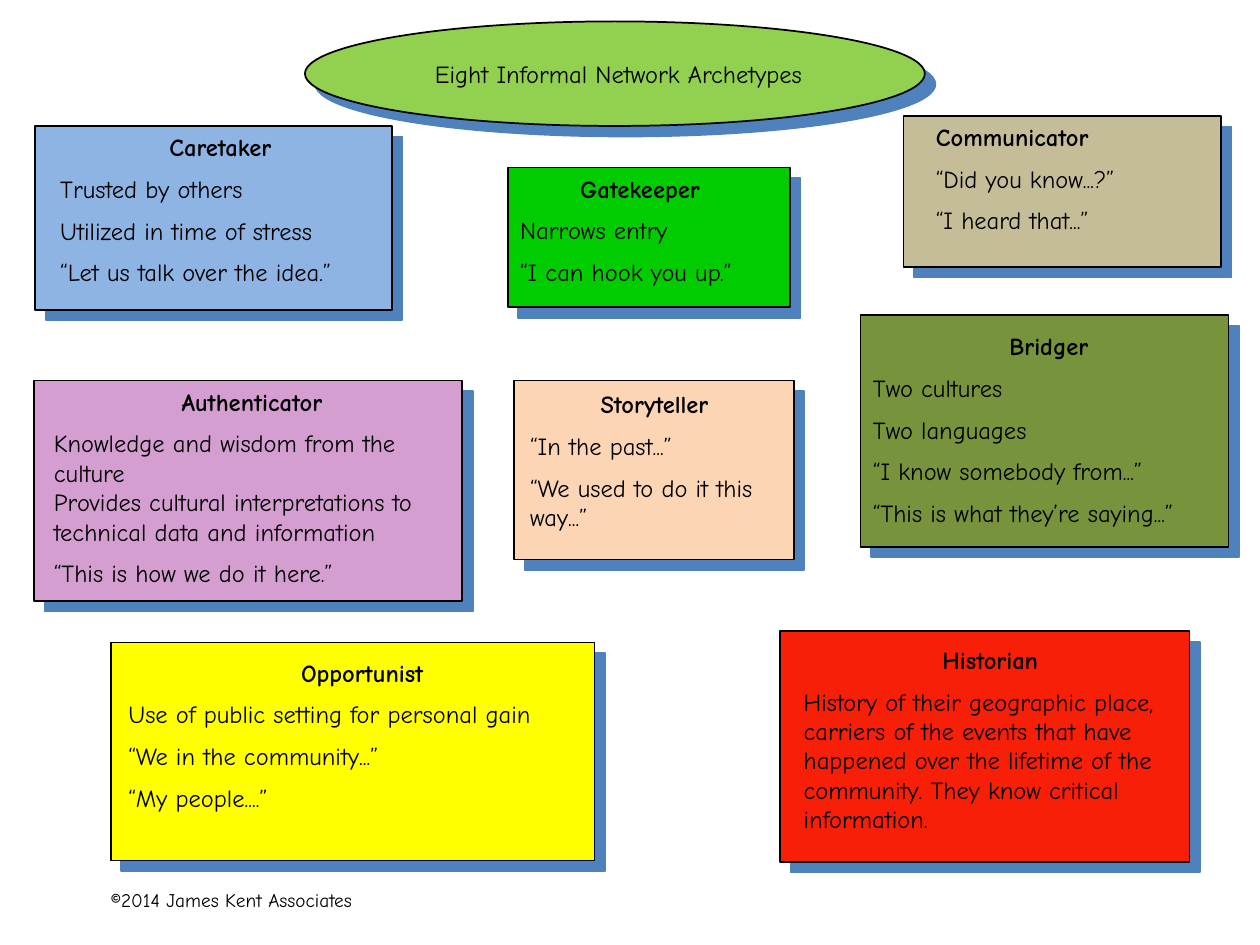
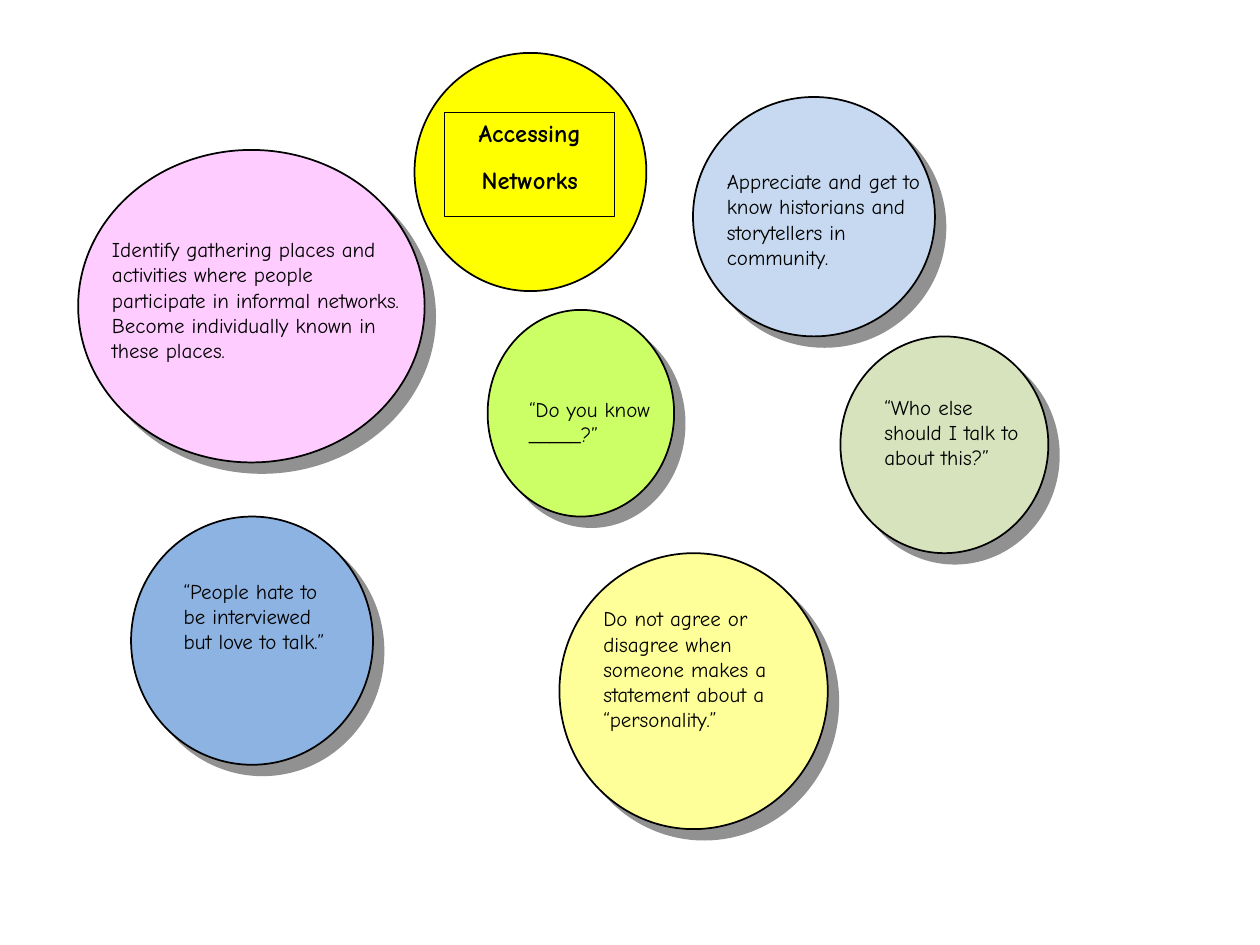
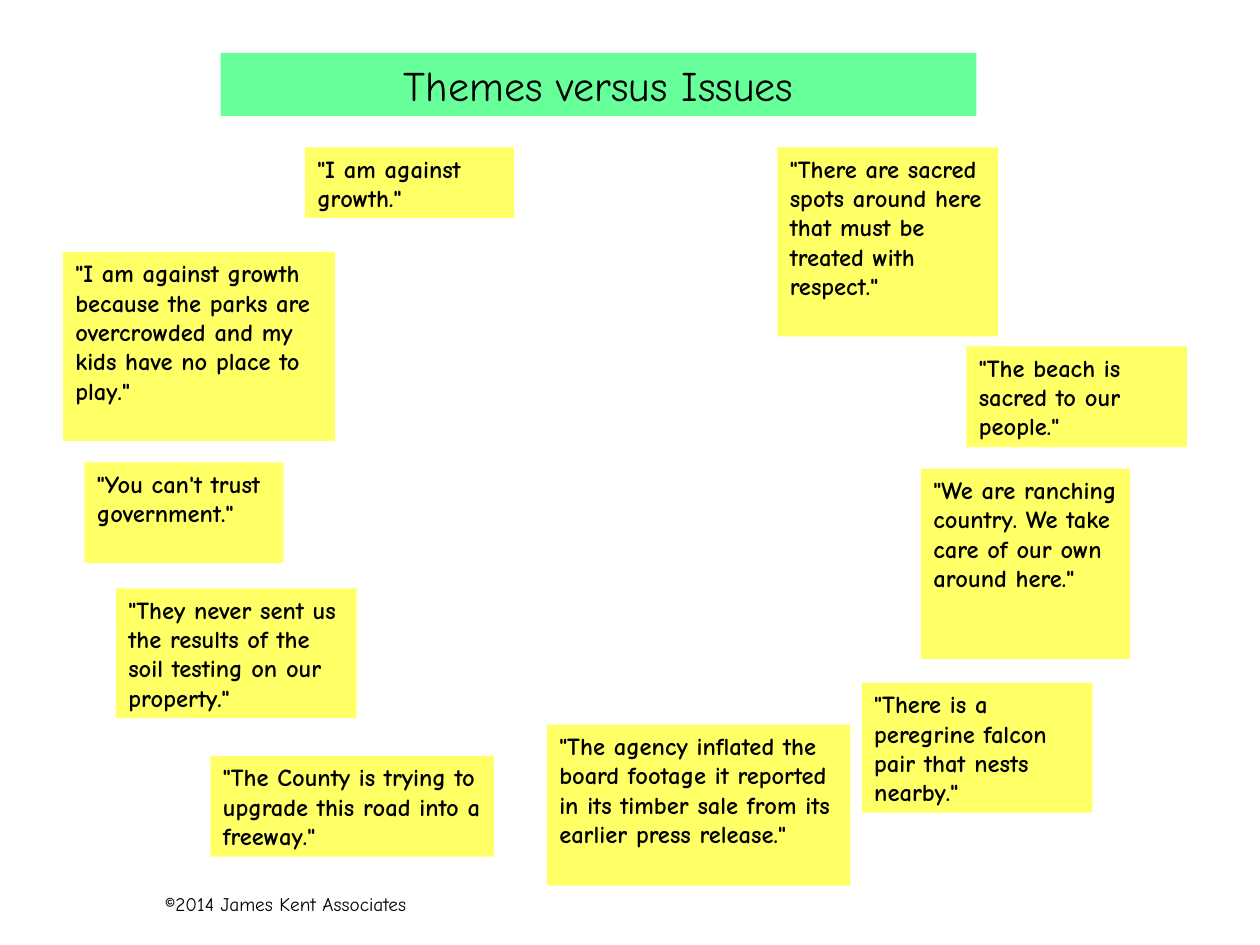
from lxml import etree
from pptx import Presentation
from pptx.dml.color import RGBColor
from pptx.enum.shapes import MSO_SHAPE
from pptx.enum.text import MSO_ANCHOR, MSO_AUTO_SIZE, PP_ALIGN
from pptx.oxml.ns import qn
from pptx.util import Inches, Pt

RECTANGLE, ELLIPSE = MSO_SHAPE.RECTANGLE, MSO_SHAPE.OVAL
LEFT, CENTER = PP_ALIGN.LEFT, PP_ALIGN.CENTER
TOP = MSO_ANCHOR.TOP
FIXED_SIZE = MSO_AUTO_SIZE.NONE

SLIDE_WIDTH, SLIDE_HEIGHT = Inches(10), Inches(7.5)
COLUMNS, ROWS = 100, 75
TITLE_ONLY, BLANK_TEXT = 5, ""
FONT = "Comic Neue"
SHADOW_DISTANCE = Pt(8.5)
SHADOW_ANGLE = 45 * 60000

BLACK = RGBColor(0x00, 0x00, 0x00)
BLUE_SHADOW = RGBColor(0x4F, 0x81, 0xBD)
GRAY_SHADOW = RGBColor(0x91, 0x91, 0x91)
LIME = RGBColor(0x92, 0xD0, 0x50)
SKY = RGBColor(0x8E, 0xB4, 0xE3)
TAN = RGBColor(0xC4, 0xBD, 0x97)
PEACH = RGBColor(0xFC, 0xD5, 0xB5)
OLIVE = RGBColor(0x77, 0x93, 0x3C)
GREEN = RGBColor(0x00, 0xCC, 0x00)
YELLOW = RGBColor(0xFF, 0xFF, 0x00)
RED = RGBColor(0xF8, 0x1F, 0x08)
ORCHID = RGBColor(0xD4, 0x9E, 0xD1)
PINK = RGBColor(0xFF, 0xCC, 0xFF)
PALE_BLUE = RGBColor(0xC6, 0xD9, 0xF1)
BRIGHT_LIME = RGBColor(0xCC, 0xFF, 0x66)
SAGE = RGBColor(0xD6, 0xE3, 0xBC)
CREAM = RGBColor(0xFF, 0xFF, 0x99)
BLUE = RGBColor(0x8D, 0xB3, 0xE2)
MINT = RGBColor(0x66, 0xFF, 0x99)
NOTE_YELLOW = RGBColor(0xFF, 0xFF, 0x66)

COPYRIGHT = "©2014 James Kent Associates"

ARCHETYPES = [
    (SKY, (2.8, 10, 28.3, 14.6), (3.8, 10, 27.4, 14.1), CENTER, "Caretaker",
     ["Trusted by others", "Utilized in time of stress", "“Let us talk over the idea.”"]),
    (TAN, (71.7, 9.2, 25.2, 12), (73.3, 9.2, 25, 10.5), LEFT, "Communicator",
     ["“Did you know...?”", "“I heard that...”"]),
    (PEACH, (40.8, 30.2, 22.2, 14.2), (41.1, 30.4, 21.7, 12.9), CENTER, "Storyteller",
     ["“In the past...”", "“We used to do it this way...”"]),
    (OLIVE, (68.3, 25, 29.2, 18.4), (68.3, 25.8, 29.9, 17.6), CENTER, "Bridger",
     ["Two cultures", "Two languages", "“I know somebody from...”",
      "“This is what they’re saying...”"]),
    (GREEN, (40.3, 13.3, 22.4, 11.1), (40.3, 13.3, 21, 10.5), CENTER, "Gatekeeper",
     ["Narrows entry", "“I can hook you up.”"]),
    (YELLOW, (8.8, 51, 38.4, 17.3), (9.2, 51.7, 39.1, 14.1), CENTER, "Opportunist",
     ["Use of public setting for personal gain", "“We in the community...”",
      "“My people....”"]),
    (RED, (61.9, 50.1, 32.5, 18.3), (62.8, 50.7, 31.6, 16.7), CENTER, "Historian",
     ["History of their geographic place, carriers of the events that have happened "
      "over the lifetime of the community. They know critical information."]),
    (ORCHID, (2.7, 30.2, 34, 17.5), (3.3, 30.2, 33.4, 18), CENTER, "Authenticator",
     ["Knowledge and wisdom from the culture\v"
      "Provides cultural interpretations to technical data and information",
      "“This is how we do it here.”"]),
]

ACCESS_TIPS = [
    (PINK, (6.2, 11.9, 27.5, 24.8), (7.9, 18.3, 25.8, 14.1),
     "Identify gathering places and activities where people participate in "
     "informal networks. Become individually known in these places."),
    (PALE_BLUE, (55, 7.7, 19.2, 19), (56.7, 12.9, 17.5, 10.2),
     "Appreciate and get to know historians and storytellers in community."),
    (BRIGHT_LIME, (38.7, 24.6, 14.8, 16.4), (41, 31, 13.8, 5.4), "“Do you know _____?”"),
    (SAGE, (66.7, 26.7, 16.5, 17.2), (69.2, 30.8, 13.2, 9.6),
     "“Who else should I talk to about this?”"),
    (CREAM, (44.4, 43.9, 21.3, 21.9), (46.9, 47.6, 16.4, 15.6),
     "Do not agree or disagree when someone makes a statement about a “personality.”"),
    (BLUE, (10.4, 41, 19.2, 19.7), (13.6, 45.4, 14.5, 11.7),
     "“People hate to be interviewed but love to talk.”"),
]

QUOTES = [
    ((24.2, 11.7, 16.6, 5.6), '"I am against growth."'),
    ((5, 20, 21.6, 15),
     '"I am against growth because the parks are overcrowded and my kids have no '
     'place to play."'),
    ((6.7, 36.7, 15.8, 8), '"You can\'t trust government."'),
    ((9.2, 46.7, 19.1, 10.3),
     '"They never sent us the results of the soil testing on our property."'),
    ((16.7, 60, 22.5, 8), '"The County is trying to upgrade this road into a freeway."'),
    ((43.4, 57.5, 24.1, 12.8),
     '"The agency inflated the board footage it reported in its timber sale from its '
     'earlier press release."'),
    ((68.4, 54.2, 18.3, 10.3), '"There is a peregrine falcon pair that nests nearby."'),
    ((73.1, 37.2, 16.6, 15.1),
     '"We are ranching country. We take care of our own around here."'),
    ((76.7, 27.5, 17.5, 8), '"The beach is sacred to our people."'),
    ((61.7, 11.7, 17.5, 15),
     '"There are sacred spots around here that must be treated with respect."'),
]


def grid_box(area):
    """Turn columns and rows into left, top, width and height on the slide."""
    left, top, width, height = area
    column, row = SLIDE_WIDTH / COLUMNS, SLIDE_HEIGHT / ROWS
    return [round(length) for length in (left * column, top * row, width * column, height * row)]


def write_text(shape, *texts, size=14, bold=False, heading=False, align=LEFT,
               heading_align=CENTER, before=7, after=0):
    """Write one paragraph per text line; a line after a \\v follows without a gap."""
    frame = shape.text_frame
    frame.word_wrap = True
    frame.auto_size = FIXED_SIZE
    frame.vertical_anchor = TOP
    lines = [(line, before if position == 0 else 0)
             for text in texts for position, line in enumerate(text.split("\v"))]
    for index, (line, gap) in enumerate(lines):
        is_heading = heading and index == 0
        paragraph = frame.add_paragraph() if index else frame.paragraphs[0]
        paragraph.alignment = heading_align if is_heading else align
        paragraph.space_before = Pt(gap if index else 0)
        paragraph.space_after = Pt(after)
        run = paragraph.add_run()
        run.text = line
        run.font.name = FONT
        run.font.size = Pt(size)
        run.font.bold = bold or is_heading
        run.font.color.rgb = BLACK


def add_panel(slide, kind, area, fill, outlined=True, shadow=None):
    """Add a filled shape with an optional outline and offset shadow."""
    shape = slide.shapes.add_shape(kind, *grid_box(area))
    shape.shadow.inherit = False
    shape.fill.solid()
    shape.fill.fore_color.rgb = fill
    if outlined:
        shape.line.color.rgb = BLACK
        shape.line.width = Pt(1)
    else:
        shape.line.fill.background()
    if shadow is not None:
        effects = shape.element.spPr.find(qn("a:effectLst"))
        outer = etree.SubElement(effects, qn("a:outerShdw"), dist=str(SHADOW_DISTANCE),
                                 dir=str(SHADOW_ANGLE), algn="ctr", rotWithShape="0")
        etree.SubElement(outer, qn("a:srgbClr"), val=str(shadow))
    return shape


def add_text_box(slide, area, *texts, **text_format):
    """Add a text box holding the given paragraphs."""
    write_text(slide.shapes.add_textbox(*grid_box(area)), *texts, **text_format)


def place_title(slide, area, *texts, fill=None, **text_format):
    """Move the title placeholder to the front of the slide and format it."""
    title = slide.shapes.title
    title.left, title.top, title.width, title.height = grid_box(area)
    title.element.getparent().append(title.element)
    if fill is not None:
        title.fill.solid()
        title.fill.fore_color.rgb = fill
    write_text(title, *texts, align=CENTER, **text_format)
    return title


def add_slide(presentation):
    """Add a slide on the title-only layout."""
    return presentation.slides.add_slide(presentation.slide_layouts[TITLE_ONLY])


def add_copyright(slide, left, top):
    """Add the copyright line."""
    add_text_box(slide, (left, top, 24.4, 2.9), COPYRIGHT, size=11)


def build_archetypes(presentation):
    """Build the slide of eight archetype cards."""
    slide = add_slide(presentation)
    add_panel(slide, ELLIPSE, (24.2, 1.7, 49.2, 8.3), LIME, shadow=BLUE_SHADOW)
    place_title(slide, (26.5, 4.2, 45.2, 3.3), "Eight Informal Network Archetypes")
    for fill, card, text_area, heading_align, name, lines in ARCHETYPES:
        add_panel(slide, RECTANGLE, card, fill, shadow=BLUE_SHADOW)
        add_text_box(slide, text_area, name, *lines, heading=True, heading_align=heading_align)
    add_copyright(slide, 7.8, 70)


def build_access(presentation):
    """Build the slide of circles around the network title."""
    slide = add_slide(presentation)
    add_panel(slide, ELLIPSE, (32.9, 4.2, 18.4, 18.9), YELLOW)
    title = place_title(slide, (35.3, 8.9, 13.5, 8.3), "Accessing", "Networks",
                        fill=YELLOW, bold=True, before=0, after=10)
    title.line.color.rgb = BLACK
    title.line.width = Pt(0.75)
    for fill, circle, text_area, tip in ACCESS_TIPS:
        add_panel(slide, ELLIPSE, circle, fill, shadow=GRAY_SHADOW)
        add_text_box(slide, text_area, tip, size=12, after=10)


def build_themes(presentation):
    """Build the slide of quoted notes."""
    slide = add_slide(presentation)
    place_title(slide, (17.5, 4.2, 60, 5), "Themes versus Issues", fill=MINT, size=24)
    for area, quote in QUOTES:
        note = add_panel(slide, RECTANGLE, area, NOTE_YELLOW, outlined=False)
        write_text(note, quote, bold=True)
    add_copyright(slide, 12.1, 70.3)


def main():
    """Build and save the presentation."""
    presentation = Presentation()
    presentation.slide_width, presentation.slide_height = SLIDE_WIDTH, SLIDE_HEIGHT
    build_archetypes(presentation)
    build_access(presentation)
    build_themes(presentation)
    presentation.save("out.pptx")


if __name__ == "__main__":
    main()
